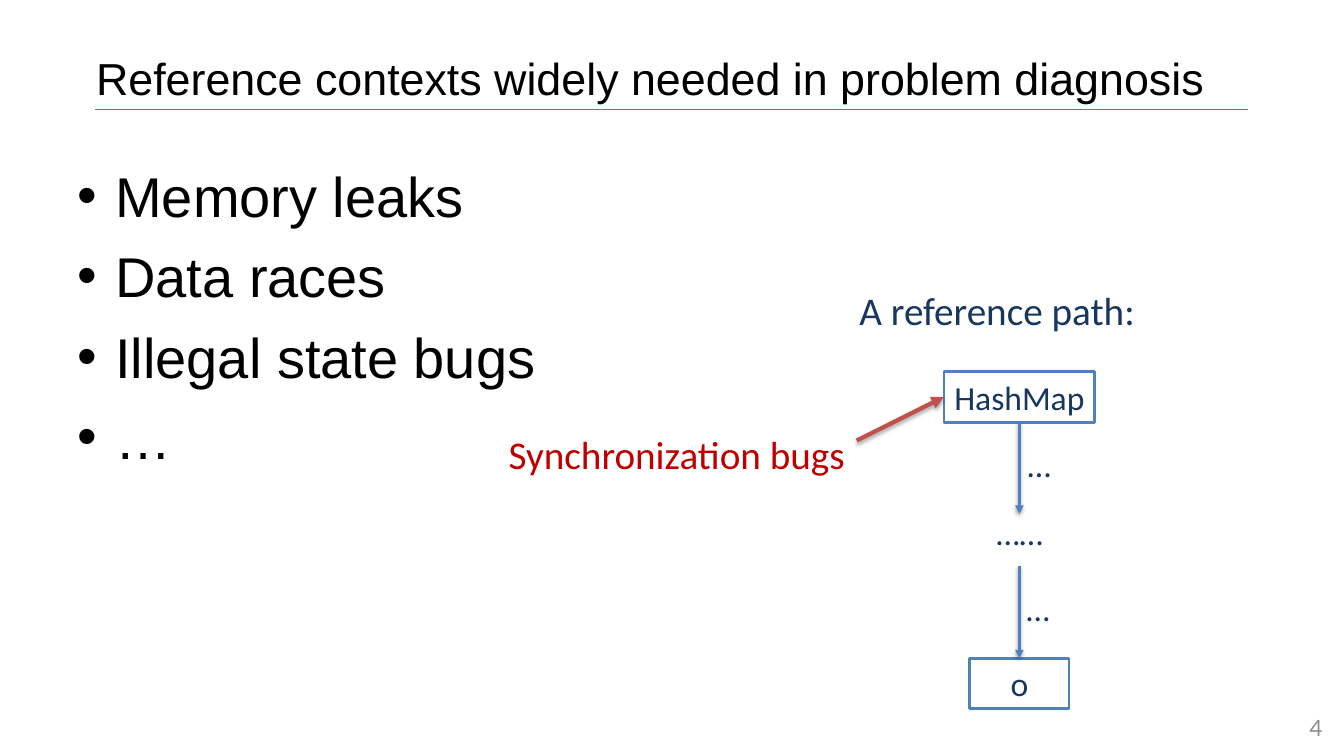
from lxml import etree
from pptx import Presentation
from pptx.dml.color import RGBColor
from pptx.enum.shapes import MSO_CONNECTOR, MSO_SHAPE
from pptx.enum.text import MSO_ANCHOR, MSO_AUTO_SIZE, PP_ALIGN
from pptx.oxml.ns import qn
from pptx.util import Cm, Pt

LINE, RECT = MSO_CONNECTOR.STRAIGHT, MSO_SHAPE.RECTANGLE
TOP, MIDDLE = MSO_ANCHOR.TOP, MSO_ANCHOR.MIDDLE
LEFT, CENTER, RIGHT = PP_ALIGN.LEFT, PP_ALIGN.CENTER, PP_ALIGN.RIGHT
FIXED = MSO_AUTO_SIZE.NONE

COLORS = {"text": "000000", "rule": "4B7EBC", "node": "4F81BD", "navy": "17375E",
          "bug": "C00000", "arrow": "C0504D", "page": "8C8C8C", "white": "FFFFFF"}


def rgb(name):
    return RGBColor.from_string(COLORS[name])


def style(para, size, color, face="Calibri", align=LEFT):
    para.alignment = align
    font = para.font
    font.size, font.name = Pt(size), face
    font.color.rgb = rgb(color)


def place(shape, box):
    shape.left, shape.top, shape.width, shape.height = map(Cm, box)


def label(slide, text, box, size, color, face="Calibri", align=LEFT, wrap=False):
    shape = slide.shapes.add_textbox(*map(Cm, box))
    frame = shape.text_frame
    frame.word_wrap = wrap
    frame.vertical_anchor = MIDDLE if wrap else TOP
    frame.text = text
    style(frame.paragraphs[0], size, color, face, align)


def node(slide, text, box):
    shape = slide.shapes.add_shape(RECT, *map(Cm, box))
    shape.shadow.inherit = False
    shape.fill.solid()
    shape.fill.fore_color.rgb = rgb("white")
    shape.line.color.rgb = rgb("node")
    shape.line.width = Pt(2)
    frame = shape.text_frame
    frame.text = text
    style(frame.paragraphs[0], 24, "navy", align=CENTER)
    return shape


def line(slide, start, end, color, width):
    link = slide.shapes.add_connector(LINE, *map(Cm, start + end))
    link.line.color.rgb = rgb(color)
    link.line.width = Pt(width)
    etree.SubElement(link._element.spPr, qn("a:effectLst"))
    return link


def arrow(slide, start, end, color="node", width=2, alpha=38, drop=1.6):
    """Draw a line with a triangle head and a soft shadow below it."""
    link = line(slide, start, end, color, width)
    props = link._element.spPr
    etree.SubElement(props.find(qn("a:ln")), qn("a:tailEnd"), type="triangle")
    shade = etree.SubElement(props.find(qn("a:effectLst")), qn("a:outerShdw"),
                             blurRad=str(Pt(3.1)), dist=str(Pt(drop)),
                             dir="5400000", rotWithShape="0")
    tint = etree.SubElement(shade, qn("a:srgbClr"), val=COLORS["text"])
    etree.SubElement(tint, qn("a:alpha"), val=str(alpha * 1000))
    return link


def fill(holder, box, lines, size, align=LEFT, gap=0):
    """Place a placeholder and give it one paragraph for each line."""
    place(holder, box)
    frame = holder.text_frame
    frame.text = "\n".join(lines)
    frame.auto_size, frame.vertical_anchor = FIXED, TOP
    frame.margin_top = Cm(0.25)
    for i, para in enumerate(frame.paragraphs):
        style(para, size, "text", "Arial", align)
        para.space_before = Pt(gap if i else 0)


def header(slide, box):
    x, y, w, h = box
    fill(slide.shapes.title, box,
         ["Reference contexts widely needed in problem diagnosis"], 32, CENTER)
    line(slide, (x + 0.69, y + 1.74), (x + w + 0.36, y + 1.74), "rule", 1.25)


def chain(slide, box):
    """Draw the reference path from the map down to the object."""
    x, y, w, h = box
    mid = x + 4.28
    label(slide, "A reference path:", (x, y, w, 1.45), 28, "navy")
    first = node(slide, "HashMap", (mid - 1.9, y + 2.28, 3.8, 1.27))
    last = node(slide, "o", (mid - 1.25, y + h - 1.27, 2.5, 1.27))
    arrow(slide, (mid, y + 3.55), (mid, y + 5.86)).begin_connect(first, 2)
    arrow(slide, (mid, y + 7.18), (mid, y + h - 1.27)).end_connect(last, 0)
    for text, dx, dy, wide in (("…", -0.06, 3.96, 1.12), ("……", -0.87, 5.69, 1.75),
                               ("…", -0.09, 7.59, 1.12)):
        label(slide, text, (mid + dx, y + dy, wide, 1.27), 24, "navy", align=CENTER)
    return first


def callout(slide, box, target):
    x, y, w, h = box
    label(slide, "Synchronization bugs", box, 28, "bug")
    link = arrow(slide, (x + w - 0.07, y + 0.38), (x + w + 2.14, y - 0.72),
                 "arrow", 3, 35, 1.8)
    link.end_connect(target, 1)


def main():
    deck = Presentation()
    deck.slide_width, deck.slide_height = Cm(33.87), Cm(19.05)
    slide = deck.slides.add_slide(deck.slide_layouts[1])
    header(slide, (1.7, 1.02, 29.4, 3.17))
    fill(slide.placeholders[1], (1.7, 3.81, 30.48, 12.57),
         ["Memory leaks", "Data races", "Illegal state bugs", "…"], 40, gap=9.6)
    label(slide, "4", (25.68, 17.83, 7.9, 1.02), 16, "page", "Lato", RIGHT, True)
    first = chain(slide, (21.41, 7.09, 7.52, 10.77))
    callout(slide, (12.57, 10.72, 9.09, 1.45), first)
    deck.save("out.pptx")


if __name__ == "__main__":
    main()
